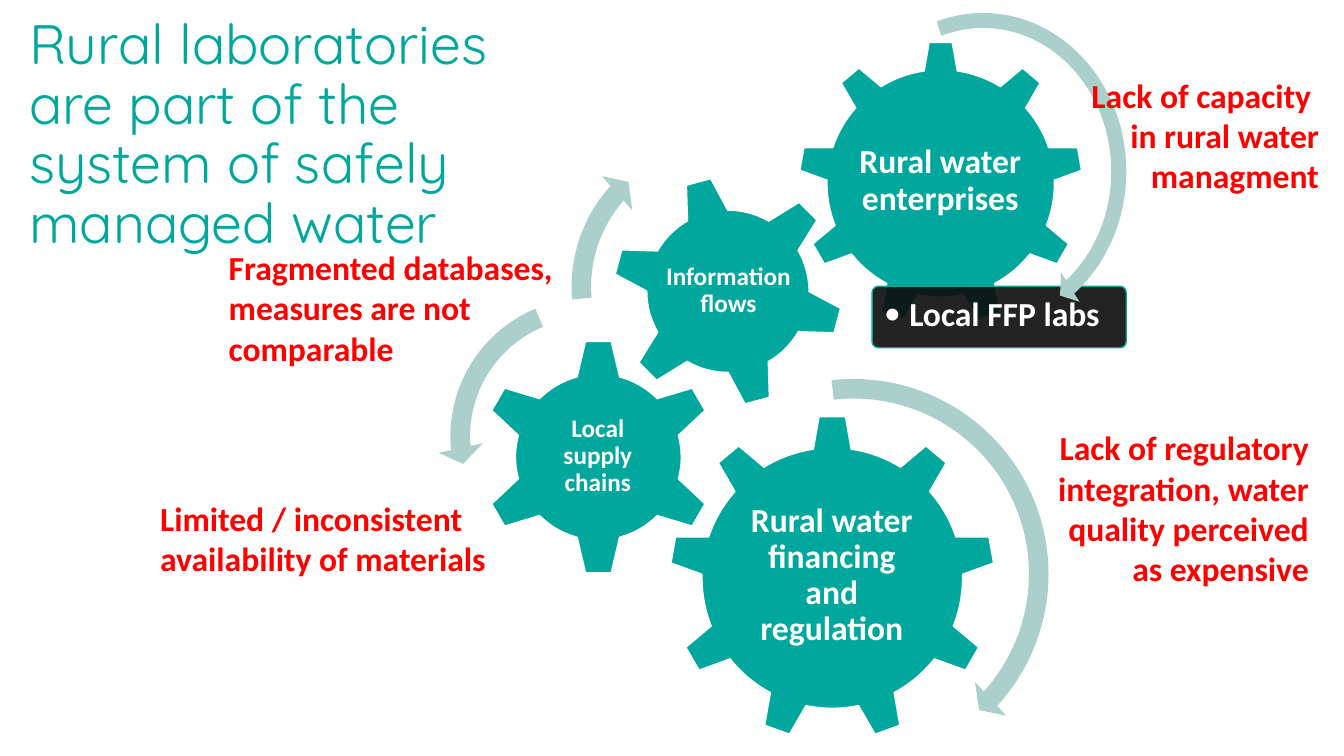
from dataclasses import dataclass

from lxml import etree
from pptx import Presentation
from pptx.dml.color import RGBColor
from pptx.enum.shapes import MSO_SHAPE
from pptx.enum.text import MSO_ANCHOR, MSO_AUTO_SIZE, PP_ALIGN
from pptx.oxml.ns import qn
from pptx.util import Inches, Pt

GEAR_6, GEAR_9 = MSO_SHAPE.GEAR_6, MSO_SHAPE.GEAR_9
ARROW, LEFT_ARROW = MSO_SHAPE.CIRCULAR_ARROW, MSO_SHAPE.LEFT_CIRCULAR_ARROW
ROUNDED = MSO_SHAPE.ROUNDED_RECTANGLE
LEFT, CENTER, RIGHT = PP_ALIGN.LEFT, PP_ALIGN.CENTER, PP_ALIGN.RIGHT
TOP, MIDDLE = MSO_ANCHOR.TOP, MSO_ANCHOR.MIDDLE
NO_FIT, GROW = MSO_AUTO_SIZE.NONE, MSO_AUTO_SIZE.SHAPE_TO_FIT_TEXT
TITLE_ONLY = 5


@dataclass(frozen=True)
class Theme:
    teal: RGBColor = RGBColor.from_string("00A79D")
    pale: RGBColor = RGBColor.from_string("ABD0CC")
    dark: RGBColor = RGBColor.from_string("0C0C0C")
    white: RGBColor = RGBColor.from_string("FFFFFF")
    red: RGBColor = RGBColor.from_string("FF0000")
    title_font: str = "Quicksand"
    body_font: str = "Calibri"
    title_size: float = 39.6
    large: int = 24
    small: int = 18
    tight: float = 0.9


class SlideBuilder:
    def __init__(self, prs, theme):
        self.theme = theme
        self.s = prs.slides.add_slide(prs.slide_layouts[TITLE_ONLY])

    def run(self, p, text, size, color, font, bold):
        r = p.add_run()
        r.text = text
        r.font.size, r.font.name, r.font.bold = Pt(size), font, bold
        r.font.color.rgb = color

    def title(self, box, text):
        t, sp = self.theme, self.s.shapes.title
        sp.left, sp.top, sp.width, sp.height = map(Inches, box)
        tf = sp.text_frame
        tf.word_wrap, tf.auto_size, tf.vertical_anchor = True, NO_FIT, MIDDLE
        p = tf.paragraphs[0]
        p.alignment, p.line_spacing = LEFT, t.tight
        self.run(p, text, t.title_size, t.teal, t.title_font, False)

    def shape(self, kind, box, fill, line=None, adjust=(), rotation=0):
        sp = self.s.shapes.add_shape(kind, *map(Inches, box))
        sp.shadow.inherit = False
        sp.rotation = rotation
        for i, value in enumerate(adjust):
            sp.adjustments[i] = value
        sp.fill.solid()
        sp.fill.fore_color.rgb = fill
        if line is None:
            sp.line.fill.background()
        else:
            sp.line.color.rgb, sp.line.width = line, Pt(1)
        return sp

    def text(self, box, lines, size, color, align=LEFT, anchor=TOP,
             inset=None, spacing=1.0, wrap=True, fit=NO_FIT, bullet=False):
        tf = self.s.shapes.add_textbox(*map(Inches, box)).text_frame
        tf.word_wrap, tf.auto_size, tf.vertical_anchor = wrap, fit, anchor
        if inset is not None:
            tf.margin_left = tf.margin_right = Inches(inset)
            tf.margin_top = tf.margin_bottom = Inches(inset)
        for i, line in enumerate(lines):
            p = tf.add_paragraph() if i else tf.paragraphs[0]
            if bullet:
                self.bullet(p)
            p.alignment, p.line_spacing = align, spacing
            self.run(p, line, size, color, self.theme.body_font, True)

    def bullet(self, p):
        pPr = p._p.get_or_add_pPr()
        pPr.set("marL", str(Inches(0.25)))
        pPr.set("indent", str(-Inches(0.25)))
        font = etree.SubElement(pPr, qn("a:buFont"))
        font.set("typeface", self.theme.body_font)
        etree.SubElement(pPr, qn("a:buChar")).set("char", "•")

    def gear(self, kind, box, label, label_box, size, rotation=0):
        t = self.theme
        self.shape(kind, box, t.teal, t.white, rotation=rotation)
        self.text(label_box, [label], size, t.white, CENTER, MIDDLE,
                  inset=0, spacing=t.tight)

    def arrow(self, kind, box, adjust):
        self.shape(kind, box, self.theme.pale, adjust=adjust)

    def tag(self, box, label_box, label):
        t = self.theme
        sp = self.shape(ROUNDED, box, t.dark, t.teal, adjust=[0.1])
        color = sp.fill._xPr.find(qn("a:solidFill"))[0]
        etree.SubElement(color, qn("a:alpha")).set("val", "90000")
        self.text(label_box, [label], t.large, t.white, inset=0.1,
                  spacing=t.tight, bullet=True)

    def problem(self, box, lines, align=LEFT, wrap=True):
        t = self.theme
        self.text(box, lines, t.large, t.red, align, wrap=wrap, fit=GROW)


def main():
    prs = Presentation()
    prs.slide_width, prs.slide_height = Inches(13.33), Inches(7.5)
    theme = Theme()
    b = SlideBuilder(prs, theme)

    b.title((0.19, 0.93, 5.17, 0.84),
            "Rural laboratories are part of the system of safely managed water")

    b.gear(GEAR_9, (6.64, 4.12, 3.23, 3.23),
           "Rural water financing and regulation",
           (7.36, 4.88, 1.78, 1.66), theme.large)
    b.gear(GEAR_6, (4.76, 3.36, 2.35, 2.35), "Local supply chains",
           (5.35, 3.95, 1.16, 1.16), theme.small)
    b.gear(GEAR_6, (6.07, 1.74, 2.3, 2.3), "Information flows",
           (6.56, 2.24, 1.33, 1.29), theme.small, rotation=345)
    b.arrow(ARROW, (6.4, 3.63, 4.13, 4.13),
            (0.047, 2.99, 25.385, 158.141, 0.055))
    b.arrow(LEFT_ARROW, (4.34, 2.83, 3, 3),
            (0.065, 4.3, 104.891, 148.378, 0.075))
    b.arrow(ARROW, (5.54, 1.23, 3.23, 3.23),
            (0.06, 3.941, 133.138, 105.082, 0.07))

    b.gear(GEAR_9, (7.92, 0.41, 2.82, 2.82), "Rural water enterprises",
           (8.48, 1.07, 1.69, 1.45), theme.large)
    b.tag((8.65, 2.84, 2.52, 0.61), (8.67, 2.85, 2.49, 0.58),
          "Local FFP labs")
    b.arrow(ARROW, (8.23, 0.03, 3.04, 3.34),
            (0.049, 3.126, 31.789, 151.727, 0.057))

    b.problem((1.49, 4.89, 3.46, 0.91),
              ["Limited / inconsistent", "availability of materials"],
              wrap=False)
    b.problem((2.17, 2.4, 3.94, 1.31),
              ["Fragmented databases, measures are not comparable"])
    b.problem((10.25, 4.19, 2.83, 1.72),
              ["Lack of regulatory integration, water quality perceived "
               "as expensive"], RIGHT)
    b.problem((10.35, 0.69, 2.83, 1.31),
              ["Lack of capacity ", "in rural water managment"], RIGHT)

    prs.save("out.pptx")


if __name__ == "__main__":
    main()
